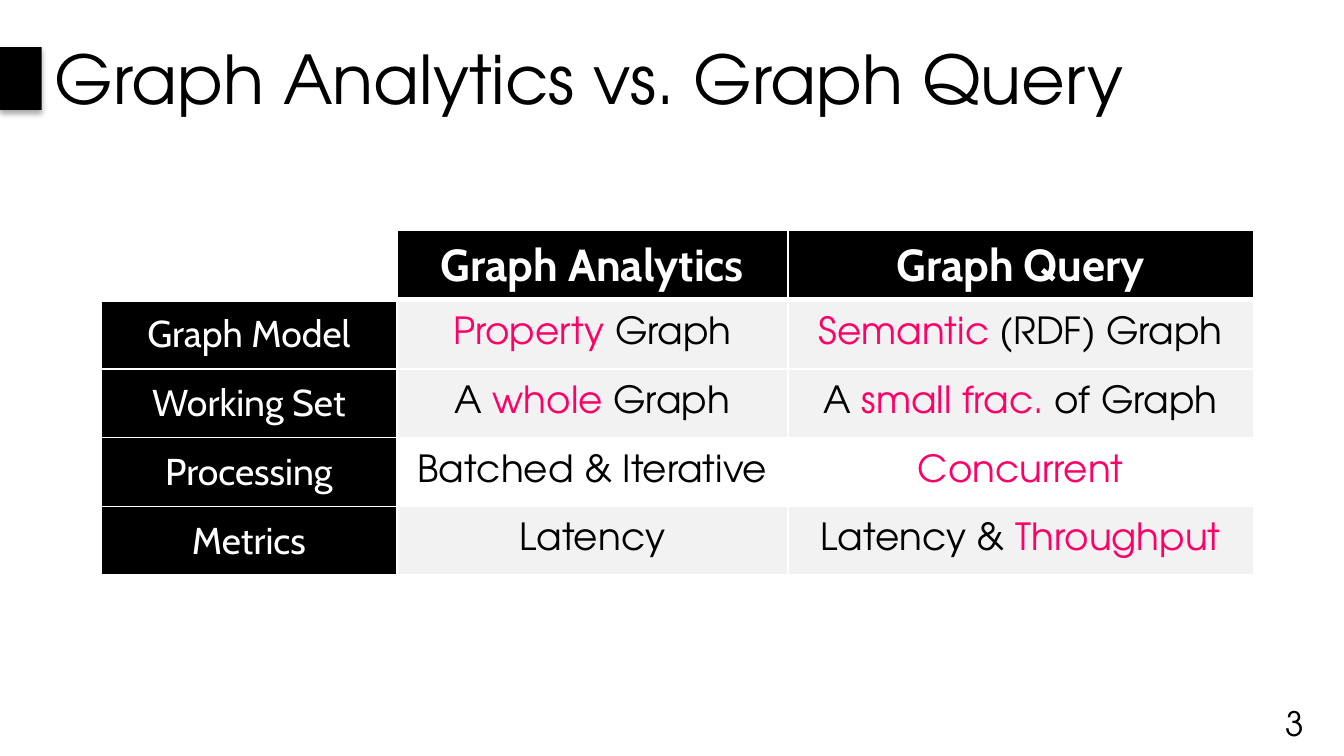
from dataclasses import dataclass

import lxml.etree
import pptx
import pptx.dml.color
import pptx.enum.shapes
import pptx.enum.text
import pptx.oxml
import pptx.oxml.ns
import pptx.slide
import pptx.table
import pptx.text.text
import pptx.util

Cm = pptx.util.Cm
Pt = pptx.util.Pt
RGBColor = pptx.dml.color.RGBColor
Align = pptx.enum.text.PP_ALIGN
Anchor = pptx.enum.text.MSO_ANCHOR
qn = pptx.oxml.ns.qn

BLACK = RGBColor(0x00, 0x00, 0x00)
WHITE = RGBColor(0xFF, 0xFF, 0xFF)
GRAY = RGBColor(0xF2, 0xF2, 0xF2)
PINK = RGBColor(0xFF, 0x00, 0x66)
BODY_FONT = "TeX Gyre Adventor"
LABEL_FONT = "Cabin"


@dataclass(frozen=True)
class Style:
    font: str
    size: int
    color: RGBColor
    bold: bool = False


@dataclass(frozen=True)
class Span:
    text: str
    accent: bool = False


@dataclass(frozen=True)
class Comparison:
    label: str
    analytics: tuple[Span, ...]
    query: tuple[Span, ...]
    fill: RGBColor = GRAY


@dataclass(frozen=True)
class Label:
    text: str
    left: float
    top: float
    width: float
    height: float
    style: Style
    align: Align


TITLE = Style(BODY_FONT, 36, BLACK)
PAGE_NUMBER = Style(BODY_FONT, 18, BLACK)
HEADER = Style(LABEL_FONT, 24, WHITE, True)
ROW_LABEL = Style(LABEL_FONT, 20, WHITE)
BODY = Style(BODY_FONT, 20, BLACK)

LABELS = (
    Label("3", 23.09, 13.28, 1.8, 0.76, PAGE_NUMBER, Align.RIGHT),
    Label("Graph Analytics vs. Graph Query", 0.79, 0, 24.61, 2.95, TITLE, Align.LEFT),
)
HEADINGS = ("", "Graph Analytics", "Graph Query")
COMPARISONS = (
    Comparison(
        "Graph Model",
        (Span("Property", True), Span(" Graph")),
        (Span("Semantic", True), Span(" (RDF) Graph")),
    ),
    Comparison(
        "Working Set",
        (Span("A "), Span("whole ", True), Span("Graph")),
        (Span("A "), Span("small frac. ", True), Span("of Graph")),
    ),
    Comparison(
        "Processing",
        (Span("Batched & Iterative"),),
        (Span("Concurrent", True),),
        WHITE,
    ),
    Comparison(
        "Metrics",
        (Span("Latency"),),
        (Span("Latency & "), Span("Throughput", True)),
    ),
)
COLUMN_WIDTHS = (5.59, 7.39, 8.8)
HEADER_HEIGHT = 1.32
ROW_HEIGHT = 1.3


def write_spans(
    para: pptx.text.text._Paragraph,
    spans: tuple[Span, ...],
    style: Style,
    align: Align,
) -> None:
    para.alignment = align
    para.font.name = style.font
    para.font.size = Pt(style.size)
    para.font.bold = style.bold
    para.font.color.rgb = style.color
    for span in spans:
        run = para.add_run()
        run.text = span.text
        if span.accent:
            run.font.color.rgb = PINK


def add_label(page: pptx.slide.Slide, label: Label) -> None:
    box = page.shapes.add_textbox(
        Cm(label.left), Cm(label.top), Cm(label.width), Cm(label.height)
    )
    frame = box.text_frame
    frame.word_wrap = True
    frame.vertical_anchor = Anchor.MIDDLE
    write_spans(frame.paragraphs[0], (Span(label.text),), label.style, label.align)


def add_title_marker(page: pptx.slide.Slide) -> None:
    marker = page.shapes.add_shape(
        pptx.enum.shapes.MSO_SHAPE.RECTANGLE, 0, Cm(0.89), Cm(0.79), Cm(1.19)
    )
    marker.shadow.inherit = False
    marker.fill.solid()
    marker.fill.fore_color.rgb = BLACK
    marker.line.fill.background()
    effects = marker.element.spPr.find(qn("a:effectLst"))
    shadow = lxml.etree.SubElement(
        effects,
        qn("a:outerShdw"),
        blurRad=str(Pt(3.1)),
        dist=str(Pt(1.8)),
        dir="5400000",
        rotWithShape="0",
    )
    color = lxml.etree.SubElement(shadow, qn("a:srgbClr"), val=str(BLACK))
    lxml.etree.SubElement(color, qn("a:alpha"), val="35000")


def set_borders(cell: pptx.table._Cell, top: int, bottom: int) -> None:
    properties = cell._tc.get_or_add_tcPr()
    for side, width in (("L", 1), ("R", 1), ("T", top), ("B", bottom)):
        line = lxml.etree.SubElement(properties, qn(f"a:ln{side}"), w=str(Pt(width)))
        fill = lxml.etree.SubElement(line, qn("a:solidFill"))
        lxml.etree.SubElement(fill, qn("a:srgbClr"), val=str(WHITE))


def fill_cell(
    cell: pptx.table._Cell,
    spans: tuple[Span, ...],
    style: Style,
    fill: RGBColor,
    top: int = 1,
    bottom: int = 1,
) -> None:
    set_borders(cell, top, bottom)
    cell.fill.solid()
    cell.fill.fore_color.rgb = fill
    cell.vertical_anchor = Anchor.MIDDLE
    if spans:
        write_spans(cell.text_frame.paragraphs[0], spans, style, Align.CENTER)


def add_comparison_table(page: pptx.slide.Slide) -> None:
    table = page.shapes.add_table(
        len(COMPARISONS) + 1,
        len(HEADINGS),
        Cm(1.91),
        Cm(4.35),
        Cm(sum(COLUMN_WIDTHS)),
        Cm(HEADER_HEIGHT + ROW_HEIGHT * len(COMPARISONS)),
    ).table
    table.first_row = False
    table.horz_banding = False
    for column, width in zip(table.columns, COLUMN_WIDTHS):
        column.width = Cm(width)
    for index, row in enumerate(table.rows):
        row.height = Cm(ROW_HEIGHT if index else HEADER_HEIGHT)
    for column, heading in enumerate(HEADINGS):
        spans = (Span(heading),) if heading else ()
        fill = BLACK if heading else WHITE
        fill_cell(table.cell(0, column), spans, HEADER, fill, bottom=3)
    for row, item in enumerate(COMPARISONS, start=1):
        top = 3 if row == 1 else 1
        fill_cell(table.cell(row, 0), (Span(item.label),), ROW_LABEL, BLACK, top)
        for column, spans in enumerate((item.analytics, item.query), start=1):
            fill_cell(table.cell(row, column), spans, BODY, item.fill, top)


def main() -> None:
    deck = pptx.Presentation()
    deck.slide_width = Cm(25.4)
    deck.slide_height = Cm(14.29)
    page = deck.slides.add_slide(deck.slide_layouts[6])
    for label in LABELS:
        add_label(page, label)
    add_title_marker(page)
    add_comparison_table(page)
    deck.save("out.pptx")


if __name__ == "__main__":
    main()
